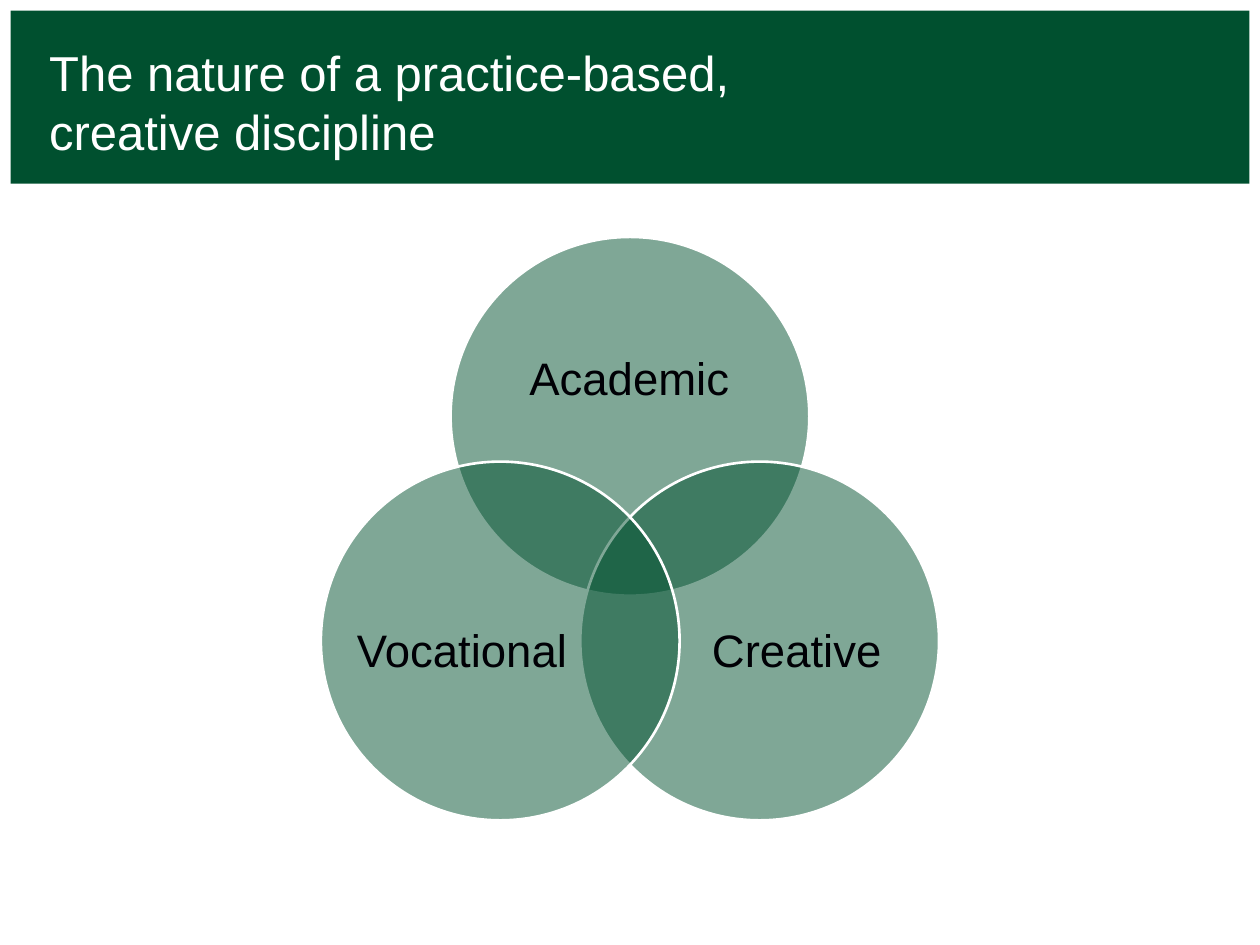
from math import cos, radians, sin

from lxml import etree
from pptx import Presentation
from pptx.dml.color import RGBColor
from pptx.enum.shapes import MSO_SHAPE
from pptx.enum.text import MSO_ANCHOR, PP_ALIGN
from pptx.oxml.ns import qn
from pptx.util import Pt

RECTANGLE, OVAL = MSO_SHAPE.RECTANGLE, MSO_SHAPE.OVAL
MIDDLE, BOTTOM = MSO_ANCHOR.MIDDLE, MSO_ANCHOR.BOTTOM
LEFT, CENTER = PP_ALIGN.LEFT, PP_ALIGN.CENTER
COLORS = {"green": "00502F", "white": "FFFFFF", "ink": "000005"}
TITLE_ONLY = 5
VENN_CENTER = (360, 323.5)
VENN_OFFSET = 85.6
CIRCLE_SIZE = 205
CIRCLES = [
    ("Academic", -90, (284.4, 171.4, 150.5, 92.2)),
    ("Creative", 30, (393.8, 316.8, 123.1, 113)),
    ("Vocational", 150, (202.5, 316.8, 123.1, 113)),
]


def color(name):
    """Return the named colour."""
    return RGBColor.from_string(COLORS[name])


def points(box):
    """Convert a box of numbers to point lengths."""
    return [Pt(value) for value in box]


def write_text(shape, text, size, ink, anchor, alignment, spacing):
    """Write one formatted paragraph into a shape without insets."""
    frame = shape.text_frame
    frame_format = {"word_wrap": True, "vertical_anchor": anchor, "margin_left": 0,
                    "margin_top": 0, "margin_right": 0, "margin_bottom": 0}
    for name, value in frame_format.items():
        setattr(frame, name, value)
    frame.text = text
    paragraph = frame.paragraphs[0]
    paragraph.alignment = alignment
    paragraph.line_spacing = spacing
    font_format = {"name": "Arial", "size": Pt(size), "bold": False}
    for name, value in font_format.items():
        setattr(paragraph.runs[0].font, name, value)
    paragraph.runs[0].font.color.rgb = color(ink)


def add_filled(shapes, kind, box):
    """Add a green preset shape without a shadow."""
    shape = shapes.add_shape(kind, *points(box))
    shape.shadow.inherit = False
    shape.fill.solid()
    shape.fill.fore_color.rgb = color("green")
    return shape


def add_title(slide):
    """Place the title over its green band."""
    band = add_filled(slide.shapes, RECTANGLE, (6, 6, 708, 99))
    band.line.fill.background()
    title = slide.shapes.title
    title.element.addprevious(band.element)
    title.left, title.top, title.width, title.height = points((28.1, 33.1, 450.7, 58.3))
    write_text(title, "The nature of a practice-based, creative discipline",
               28, "white", BOTTOM, LEFT, 1.0)


def add_circle(shapes, angle):
    """Add a half-transparent circle at an angle around the Venn centre."""
    left = VENN_CENTER[0] + VENN_OFFSET * cos(radians(angle)) - CIRCLE_SIZE / 2
    top = VENN_CENTER[1] + VENN_OFFSET * sin(radians(angle)) - CIRCLE_SIZE / 2
    circle = add_filled(shapes, OVAL, (left, top, CIRCLE_SIZE, CIRCLE_SIZE))
    fill_color = circle.element.spPr.find(qn("a:solidFill"))[0]
    etree.SubElement(fill_color, qn("a:alpha"), val="50000")
    circle.line.color.rgb = color("white")
    circle.line.width = Pt(1.5)


def add_venn(slide):
    """Add the group of overlapping circles with their labels."""
    group = slide.shapes.add_group_shape()
    for text, angle, box in CIRCLES:
        add_circle(group.shapes, angle)
        label = group.shapes.add_textbox(*points(box))
        write_text(label, text, 26, "ink", MIDDLE, CENTER, 0.9)


def main():
    """Build and save the slide."""
    presentation = Presentation()
    presentation.slide_width, presentation.slide_height = Pt(720), Pt(540)
    slide = presentation.slides.add_slide(presentation.slide_layouts[TITLE_ONLY])
    add_title(slide)
    add_venn(slide)
    presentation.save("out.pptx")


if __name__ == "__main__":
    main()
